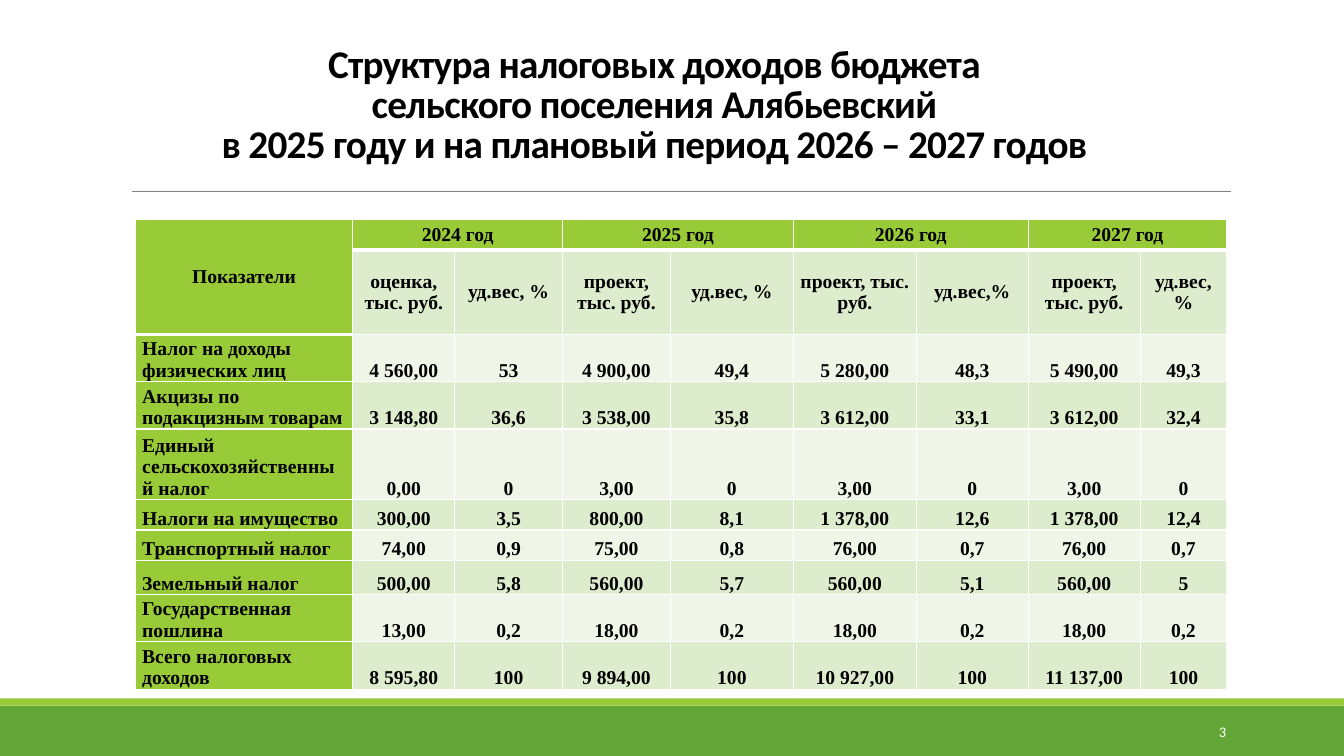
from lxml import etree
from pptx import Presentation
from pptx.dml.color import RGBColor
from pptx.enum.shapes import MSO_CONNECTOR, MSO_SHAPE
from pptx.enum.text import MSO_ANCHOR, PP_ALIGN
from pptx.oxml.ns import qn
from pptx.util import Inches, Pt

LEFT, CENTER, RIGHT = PP_ALIGN.LEFT, PP_ALIGN.CENTER, PP_ALIGN.RIGHT
MIDDLE, BOTTOM = MSO_ANCHOR.MIDDLE, MSO_ANCHOR.BOTTOM
RECTANGLE = MSO_SHAPE.RECTANGLE
STRAIGHT = MSO_CONNECTOR.STRAIGHT

DARK_GREEN, GREEN = "63A537", "99CB38"
BANDS = ("EFF6E8", "DEECCE")
WHITE, BLACK, GRAY = "FFFFFF", "000000", "808080"

TITLE_FONT = {"name": "Calibri", "size": Pt(28), "bold": True}
TABLE_FONT = {"name": "Times New Roman", "size": Pt(14), "bold": True}
NUMBER_FONT = {"name": "Calibri", "size": Pt(10.5)}

TITLE = ("Структура налоговых доходов бюджета \v"
         "сельского поселения Алябьевский \v"
         "в 2025 году и на плановый период 2026 – 2027 годов ")
YEARS = ("2024 год", "2025 год", "2026 год", "2027 год")
SUBHEADERS = ("оценка, тыс. руб.", "уд.вес, %", "проект, тыс. руб.", "уд.вес, %",
              "проект, тыс. руб.", "уд.вес,%", "проект, тыс. руб.", "уд.вес, %")
TAX_ROWS = (
    ("Налог на доходы физических лиц",
     "4 560,00", "53", "4 900,00", "49,4", "5 280,00", "48,3", "5 490,00", "49,3"),
    ("Акцизы по подакцизным товарам",
     "3 148,80", "36,6", "3 538,00", "35,8", "3 612,00", "33,1", "3 612,00", "32,4"),
    ("Единый сельскохозяйственный налог",
     "0,00", "0", "3,00", "0", "3,00", "0", "3,00", "0"),
    ("Налоги на имущество",
     "300,00", "3,5", "800,00", "8,1", "1 378,00", "12,6", "1 378,00", "12,4"),
    ("Транспортный налог",
     "74,00", "0,9", "75,00", "0,8", "76,00", "0,7", "76,00", "0,7"),
    ("Земельный налог",
     "500,00", "5,8", "560,00", "5,7", "560,00", "5,1", "560,00", "5"),
    ("Государственная пошлина",
     "13,00", "0,2", "18,00", "0,2", "18,00", "0,2", "18,00", "0,2"),
    ("Всего налоговых доходов",
     "8 595,80", "100", "9 894,00", "100", "10 927,00", "100", "11 137,00", "100"),
)
COLUMN_WIDTHS = (2.16, 1.01, 1.07, 1.07, 1.22, 1.22, 1.11, 1.11, 0.86)
ROW_HEIGHTS = (0.3, 0.84, 0.46, 0.47, 0.7, 0.3, 0.3, 0.34, 0.47, 0.47)


def color(value):
    return RGBColor.from_string(value)


def box(left, top, width, height):
    return tuple(Inches(length) for length in (left, top, width, height))


def write(text_frame, text, font, font_color, alignment):
    text_frame.text = text
    paragraph = text_frame.paragraphs[0]
    paragraph.alignment = alignment
    for run in paragraph.runs:
        for name, value in font.items():
            setattr(run.font, name, value)
        run.font.color.rgb = color(font_color)
    return paragraph


def add_band(slide, top, height, fill):
    band = slide.shapes.add_shape(RECTANGLE, *box(0, top, 13.33, height))
    band.shadow.inherit = False
    band.fill.solid()
    band.fill.fore_color.rgb = color(fill)
    band.line.fill.background()


def add_rule(slide, left, right, top):
    rule = slide.shapes.add_connector(
        STRAIGHT, Inches(left), Inches(top), Inches(right), Inches(top))
    rule.line.color.rgb = color(GRAY)
    rule.line.width = Pt(0.5)
    etree.SubElement(rule._element.spPr, qn("a:effectLst"))


def add_text(slide, position, text, font, font_color, alignment, anchor):
    text_frame = slide.shapes.add_textbox(*box(*position)).text_frame
    text_frame.word_wrap = True
    text_frame.vertical_anchor = anchor
    return write(text_frame, text, font, font_color, alignment)


def set_borders(cell, bottom_width):
    properties = cell._tc.get_or_add_tcPr()
    for side, width in (("L", 1), ("R", 1), ("T", 1), ("B", bottom_width)):
        line = etree.SubElement(properties, qn(f"a:ln{side}"), w=str(Pt(width)))
        fill = etree.SubElement(line, qn("a:solidFill"))
        etree.SubElement(fill, qn("a:srgbClr"), val=WHITE)


def fill_cell(cell, text, fill, alignment, anchor, bottom_width=1):
    set_borders(cell, bottom_width)
    layout = {"margin_left": Inches(0.07), "margin_right": Inches(0.07),
              "margin_top": 0, "margin_bottom": 0, "vertical_anchor": anchor}
    for name, value in layout.items():
        setattr(cell, name, value)
    cell.fill.solid()
    cell.fill.fore_color.rgb = color(fill)
    write(cell.text_frame, text, TABLE_FONT, BLACK, alignment)


def add_tax_table(slide):
    table = slide.shapes.add_table(
        len(ROW_HEIGHTS), len(COLUMN_WIDTHS), *box(1.34, 2.18, 10.84, 4.65)).table
    table.first_row = table.horz_banding = False
    for column, width in zip(table.columns, COLUMN_WIDTHS):
        column.width = Inches(width)
    for row, height in zip(table.rows, ROW_HEIGHTS):
        row.height = Inches(height)

    year_cells = [text for year in YEARS for text in (year, "")]
    for index, text in enumerate(["Показатели"] + year_cells):
        fill_cell(table.cell(0, index), text, GREEN, CENTER, MIDDLE, 3)
    fill_cell(table.cell(1, 0), "", GREEN, CENTER, MIDDLE, 3)
    for index, text in enumerate(SUBHEADERS, 1):
        fill_cell(table.cell(1, index), text, BANDS[1], CENTER, MIDDLE)
    table.cell(0, 0).merge(table.cell(1, 0))
    for index in range(1, len(COLUMN_WIDTHS), 2):
        table.cell(0, index).merge(table.cell(0, index + 1))

    for row_index, (tax, *values) in enumerate(TAX_ROWS, 2):
        fill_cell(table.cell(row_index, 0), tax, GREEN, LEFT, BOTTOM)
        for index, value in enumerate(values, 1):
            fill_cell(table.cell(row_index, index), value,
                      BANDS[row_index % 2], CENTER, BOTTOM)


def main():
    presentation = Presentation()
    presentation.slide_width = Inches(13.33)
    presentation.slide_height = Inches(7.5)
    slide = presentation.slides.add_slide(presentation.slide_layouts[6])

    add_band(slide, 7, 0.5, DARK_GREEN)
    add_band(slide, 6.93, 0.07, GREEN)
    add_rule(slide, 1.31, 12.21, 1.9)
    title = add_text(slide, (1.83, 0.74, 9.4, 0.96), TITLE,
                     TITLE_FONT, BLACK, CENTER, BOTTOM)
    title.line_spacing = 0.85
    for run in title.runs:
        run.font._element.set("spc", "-50")
    add_tax_table(slide)
    add_text(slide, (10.83, 7.06, 1.43, 0.4), "3", NUMBER_FONT, WHITE, RIGHT, MIDDLE)
    presentation.save("out.pptx")


if __name__ == "__main__":
    main()
